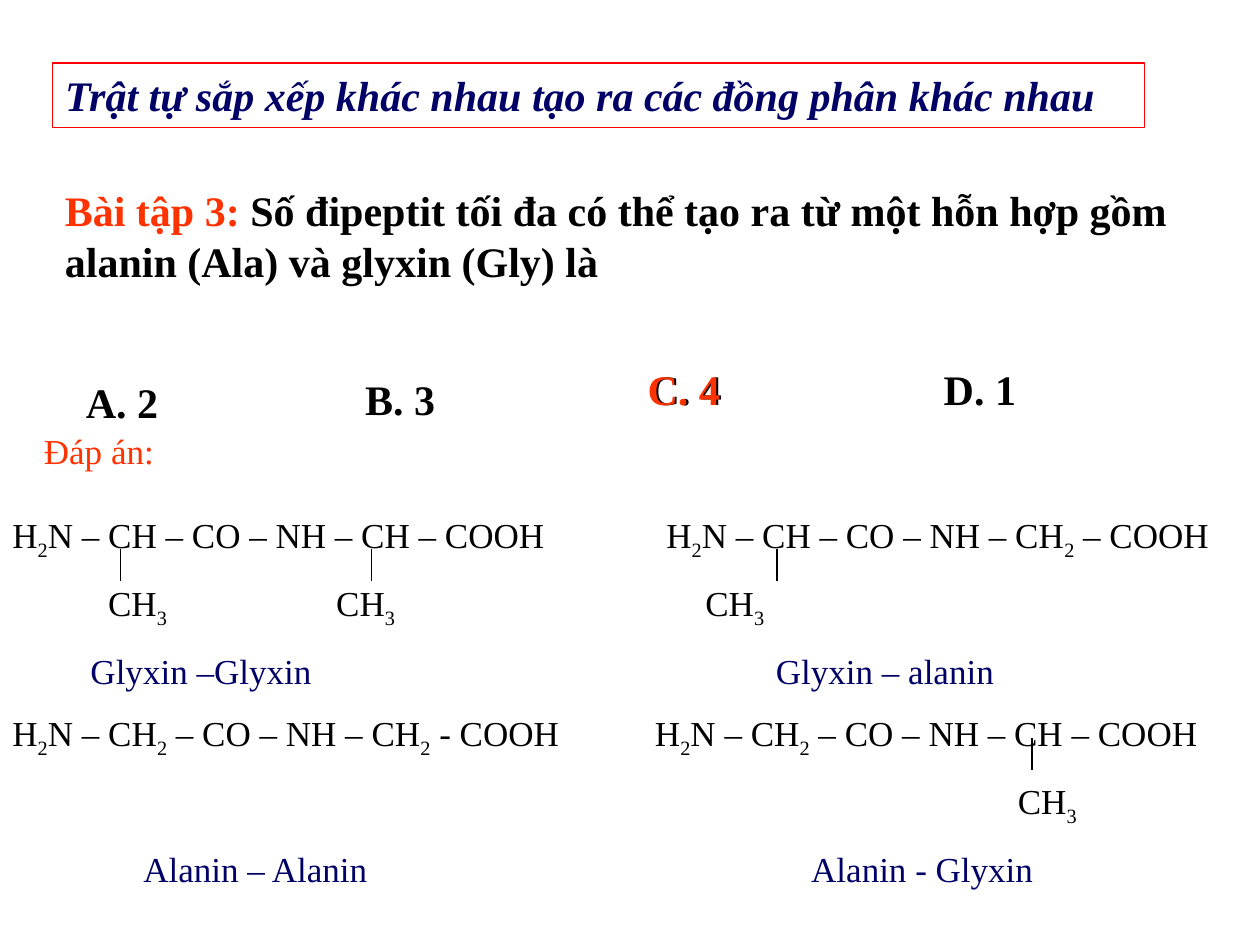
from dataclasses import dataclass
from itertools import groupby

from lxml import etree
from pptx import Presentation, util as u
from pptx.dml.color import RGBColor
from pptx.enum import shapes, text
from pptx.oxml.ns import qn


@dataclass(frozen=True)
class Theme:
    font: str = "Times New Roman"
    navy: str = "000066"
    orange: str = "FF3300"
    black: str = "000000"
    red: str = "FF0000"
    large: float = 24
    normal: float = 20
    gap: float = 11.5
    hairline: float = 0.75


class Board:
    """Style and current slide; lengths are cells of a 24 by 18 grid."""

    columns, rows = 24, 18

    def __init__(self, deck, theme):
        self.theme = theme
        self.width, self.height = deck.slide_width, deck.slide_height
        self.slide = deck.slides.add_slide(deck.slide_layouts[5])

    def x(self, column):
        return round(self.width * column / self.columns)

    def y(self, row):
        return round(self.height * row / self.rows)

    def span(self, para, words, size, color, bold=False, italic=False, sub=False):
        span = para.add_run()
        span.text = words
        font = span.font
        font.name, font.size = self.theme.font, u.Pt(size)
        font.bold, font.italic = bold, italic
        font.color.rgb = RGBColor.from_string(color)
        if sub:
            span._r.get_or_add_rPr().set("baseline", "-25000")

    def prepare(self, box, anchor=text.MSO_ANCHOR.TOP):
        frame = box.text_frame
        frame.word_wrap = True
        frame.auto_size = text.MSO_AUTO_SIZE.NONE
        frame.vertical_anchor = anchor
        para = frame.paragraphs[0]
        para.alignment = text.PP_ALIGN.LEFT
        return para

    def title(self, column, row, width, height, words):
        box = self.slide.shapes.title
        box.left, box.top = self.x(column), self.y(row)
        box.width, box.height = self.x(width), self.y(height)
        box.line.color.rgb = RGBColor.from_string(self.theme.red)
        box.line.width = u.Pt(self.theme.hairline)
        para = self.prepare(box)
        para.line_spacing, para.space_before = 1.0, u.Pt(0)
        self.span(para, words, self.theme.large, self.theme.navy, True, True)

    def box(self, column, row, width, height):
        return self.slide.shapes.add_textbox(
            self.x(column), self.y(row), self.x(width), self.y(height))

    def label(self, column, row, width, height, spans, size, bold=True):
        para = self.prepare(self.box(column, row, width, height))
        for words, color in spans:
            self.span(para, words, size, color, bold)

    def tabs(self, para, stops):
        """Left tab stops, in inches from the text edge."""
        tab_list = etree.SubElement(para._p.get_or_add_pPr(), qn("a:tabLst"))
        for stop in stops:
            etree.SubElement(tab_list, qn("a:tab"), pos=str(u.Inches(stop)), algn="l")

    def formulas(self, column, row, width, height, lines):
        """Each line is a colour and its pieces by tab position; digits are lowered."""
        box = self.box(column, row, width, height)
        para = self.prepare(box)
        for number, (color, pieces) in enumerate(lines):
            if number:
                para = box.text_frame.add_paragraph()
                para.space_before = u.Pt(self.theme.gap)
            self.tabs(para, [stop for stop in pieces if stop])
            for stop, formula in pieces.items():
                words = "\t" + formula if stop else formula
                for lowered, part in groupby(words, str.isdigit):
                    self.span(para, "".join(part), self.theme.normal, color, sub=lowered)

    def bond(self, column, row, length=0.6):
        line = self.slide.shapes.add_connector(
            shapes.MSO_CONNECTOR.STRAIGHT, self.x(column), self.y(row),
            self.x(column), self.y(row + length))
        line.line.color.rgb = RGBColor.from_string(self.theme.black)
        line.line.width = u.Pt(self.theme.hairline)
        etree.SubElement(line._element.spPr, qn("a:effectLst"))


def main():
    deck = Presentation()
    deck.slide_width, deck.slide_height = u.Inches(10), u.Inches(7.5)
    theme = Theme()
    board = Board(deck, theme)

    # Title and question
    board.title(1, 1.2, 20.8, 1.23,
                "Trật tự sắp xếp khác nhau tạo ra các đồng phân khác nhau")
    board.label(1, 3.4, 22.4, 2.18, [
        ("Bài tập 3: ", theme.orange),
        ("Số đipeptit tối đa có thể tạo ra từ một hỗn hợp gồm "
         "alanin (Ala) và glyxin (Gly) là", theme.black)], theme.large)

    # Choices, with the right one marked on top
    for column, row, words, color in [
            (6.72, 7, "B. 3", theme.black),
            (1.4, 7.06, "A. 2", theme.black),
            (12.14, 6.8, "C. 4", theme.black),
            (17.74, 6.8, "D. 1", theme.black),
            (12.1, 6.8, "C. 4", theme.orange)]:
        board.label(column, row, 2.88, 1.2, [(words, color)], theme.large)

    # Answer: four dipeptides and their names
    board.formulas(0, 9.67, 24, 8.23, [
        (theme.black, {0: "H2N – CH – CO – NH – CH – COOH",
                       5.19: "H2N – CH – CO – NH – CH2 – COOH"}),
        (theme.black, {0.76: "CH3", 2.57: "CH3", 5.5: "CH3"}),
        (theme.navy, {0.62: "Glyxin –Glyxin", 6.06: "Glyxin – alanin"}),
        (theme.black, {0: "H2N – CH2 – CO – NH – CH2 - COOH",
                       5.1: "H2N – CH2 – CO – NH – CH – COOH"}),
        (theme.black, {7.98: "CH3"}),
        (theme.navy, {1.04: "Alanin – Alanin", 6.34: "Alanin - Glyxin"})])
    board.label(0.6, 8.06, 3, 1.03, [("Đáp án:", theme.orange)], theme.normal, bold=False)

    # Bonds down to the CH3 groups
    for column, row in [(2.3, 10.46), (7.08, 10.46), (14.8, 10.46), (19.66, 14.06)]:
        board.bond(column, row)

    deck.save("out.pptx")


if __name__ == "__main__":
    main()
